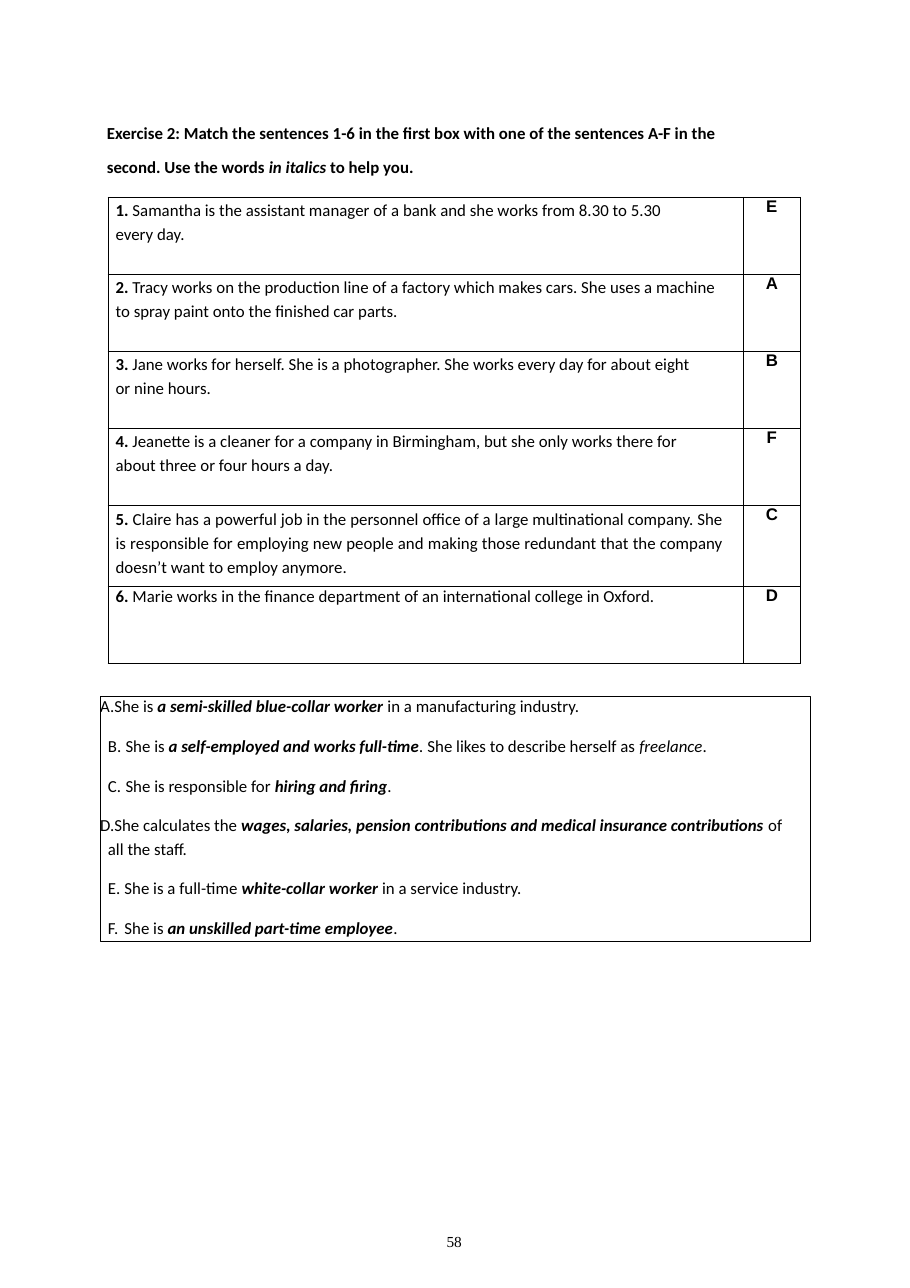
from dataclasses import dataclass

from lxml import etree
from pptx import Presentation
from pptx.dml.color import RGBColor
from pptx.enum.shapes import MSO_SHAPE
from pptx.enum.text import MSO_ANCHOR, PP_ALIGN
from pptx.oxml.ns import qn
from pptx.util import Inches, Pt

RECTANGLE = MSO_SHAPE.RECTANGLE
TOP = MSO_ANCHOR.TOP
LEFT, CENTER, JUSTIFY = PP_ALIGN.LEFT, PP_ALIGN.CENTER, PP_ALIGN.JUSTIFY


@dataclass(frozen=True)
class Theme:
    ink: RGBColor = RGBColor(0, 0, 0)
    body_font: str = "Calibri"
    answer_font: str = "Arial"
    number_font: str = "Times New Roman"
    body_size: float = 11
    number_size: float = 10
    border: float = 0.58


THEME = Theme()


@dataclass(frozen=True)
class Span:
    text: str
    bold: bool = False
    italic: bool = False


@dataclass(frozen=True)
class Sentence:
    text: str
    answer: str
    right_margin: float
    height: float = 0.7
    spacing: float = 1.16
    alignment: PP_ALIGN = LEFT


@dataclass(frozen=True)
class Option:
    spans: tuple[Span, ...]
    margin: float
    indent: float
    space_before: float = 12.7
    spacing: float = 1.0


def strong(text: str) -> Span:
    return Span(text, bold=True, italic=True)


HEADING = (
    Span("Exercise 2: Match the sentences 1-6 in the first box with one of the "
         "sentences A-F in the second. Use the words ", bold=True),
    strong("in italics "),
    Span("to help you.", bold=True),
)

SENTENCES = (
    Sentence("Samantha is the assistant manager of a bank and she works from 8.30 to 5.30 "
             "every day.", "E", 0.5),
    Sentence("Tracy works on the production line of a factory which makes cars. She uses a "
             "machine to spray paint onto the finished car parts.", "A", 0.18),
    Sentence("Jane works for herself. She is a photographer. She works every day for about "
             "eight or nine hours.", "B", 0.37),
    Sentence("Jeanette is a cleaner for a company in Birmingham, but she only works there for "
             "about three or four hours a day.", "F", 0.37),
    Sentence("Claire has a powerful job in the personnel office of a large multinational "
             "company. She is responsible for employing new people and making those redundant "
             "that the company doesn’t want to employ anymore.", "C", 0.18,
             height=0.73, spacing=1.17, alignment=JUSTIFY),
    Sentence("Marie works in the finance department of an international college in Oxford.",
             "D", 0.18, spacing=1.0),
)

OPTIONS = (
    Option((Span("She is "), strong("a semi-skilled blue-collar worker "),
            Span("in a manufacturing industry.")), 0.07, -0.07, space_before=0),
    Option((Span("She is "), strong("a self-employed and works full-time"),
            Span(". ", italic=True), Span("She likes to describe herself as "),
            Span("freelance", italic=True), Span(".")), 0.23, -0.16),
    Option((Span("She is responsible for "), strong("hiring and firing"), Span(".")),
           0.23, -0.16),
    Option((Span("She calculates the "),
            strong("wages, salaries, pension contributions and medical insurance "
                   "contributions "),
            Span("of all the staff.")), 0.07, -0.07, space_before=10.6, spacing=1.16),
    Option((Span("She is a full-time "), strong("white-collar worker "),
            Span("in a service industry.")), 0.22, -0.15),
    Option((Span("She is "), strong("an unskilled part-time employee"), Span(".")),
           0.22, -0.15),
)


def set_attributes(target, values: dict) -> None:
    for name, value in values.items():
        setattr(target, name, value)


def set_margins(target, left: float = 0, right: float = 0) -> None:
    set_attributes(target, {"margin_left": Inches(left), "margin_right": Inches(right),
                            "margin_top": 0, "margin_bottom": 0})


def write(paragraph, spans: tuple[Span, ...], font: str = THEME.body_font,
          size: float = THEME.body_size, **layout) -> None:
    set_attributes(paragraph, layout)
    for span in spans:
        run = paragraph.add_run()
        run.text = span.text
        set_attributes(run.font, {"name": font, "size": Pt(size),
                                  "bold": span.bold, "italic": span.italic})
        run.font.color.rgb = THEME.ink


def add_text(slide, left: float, top: float, width: float, height: float,
             right_margin: float = 0):
    text_frame = slide.shapes.add_textbox(
        Inches(left), Inches(top), Inches(width), Inches(height)).text_frame
    text_frame.word_wrap = True
    set_margins(text_frame, right=right_margin)
    return text_frame.paragraphs[0]


def add_borders(cell) -> None:
    properties = cell._tc.get_or_add_tcPr()
    for index, side in enumerate(("lnL", "lnR", "lnT", "lnB")):
        line = etree.Element(qn(f"a:{side}"), w=str(int(Pt(THEME.border))))
        fill = etree.SubElement(line, qn("a:solidFill"))
        etree.SubElement(fill, qn("a:srgbClr"), val=str(THEME.ink))
        properties.insert(index, line)


def add_sentence_table(slide) -> None:
    widths = (5.77, 0.52)
    height = sum(sentence.height for sentence in SENTENCES)
    table = slide.shapes.add_table(len(SENTENCES), len(widths), Inches(0.98), Inches(1.79),
                                   Inches(sum(widths)), Inches(height)).table
    set_attributes(table, {"first_row": False, "horz_banding": False})
    for column, width in zip(table.columns, widths):
        column.width = Inches(width)
    for number, (row, sentence) in enumerate(zip(table.rows, SENTENCES), start=1):
        row.height = Inches(sentence.height)
        sentence_cell, answer_cell = row.cells
        for cell in row.cells:
            cell.fill.background()
            add_borders(cell)
        set_margins(sentence_cell, 0.07, sentence.right_margin)
        set_margins(answer_cell)
        write(sentence_cell.text_frame.paragraphs[0],
              (Span(f"{number}. ", bold=True), Span(sentence.text)),
              alignment=sentence.alignment, line_spacing=sentence.spacing)
        write(answer_cell.text_frame.paragraphs[0], (Span(sentence.answer, bold=True),),
              font=THEME.answer_font, alignment=CENTER)


def add_letter(paragraph, option: Option, position: int) -> None:
    properties = paragraph._p.get_or_add_pPr()
    properties.set("marL", str(int(Inches(option.margin))))
    properties.set("indent", str(int(Inches(option.indent))))
    etree.SubElement(properties, qn("a:buAutoNum"), type="alphaUcPeriod",
                     startAt=str(position))


def add_option_box(slide) -> None:
    box = slide.shapes.add_shape(RECTANGLE, Inches(0.91), Inches(6.32),
                                 Inches(6.45), Inches(2.23))
    box.shadow.inherit = False
    box.fill.background()
    box.line.color.rgb = THEME.ink
    box.line.width = Pt(THEME.border)
    text_frame = box.text_frame
    set_attributes(text_frame, {"word_wrap": True, "vertical_anchor": TOP})
    set_margins(text_frame, right=0.18)
    for position, option in enumerate(OPTIONS, start=1):
        paragraph = text_frame.paragraphs[0] if position == 1 else text_frame.add_paragraph()
        write(paragraph, option.spans, alignment=LEFT, line_spacing=option.spacing,
              space_before=Pt(option.space_before))
        add_letter(paragraph, option, position)


def main() -> None:
    presentation = Presentation()
    # A4 page, 595 by 842 points
    presentation.slide_width = Inches(595 / 72)
    presentation.slide_height = Inches(842 / 72)
    slide = presentation.slides.add_slide(presentation.slide_layouts[6])

    # Instruction, sentences with answers, then the lettered options
    write(add_text(slide, 0.97, 1, 6.09, 0.48, right_margin=0.2), HEADING, line_spacing=1.64)
    add_sentence_table(slide)
    add_option_box(slide)

    # Page number
    write(add_text(slide, 4.03, 11.19, 0.19, 0.17), (Span("58"),), font=THEME.number_font,
          size=THEME.number_size, alignment=CENTER)
    presentation.save("out.pptx")


if __name__ == "__main__":
    main()
